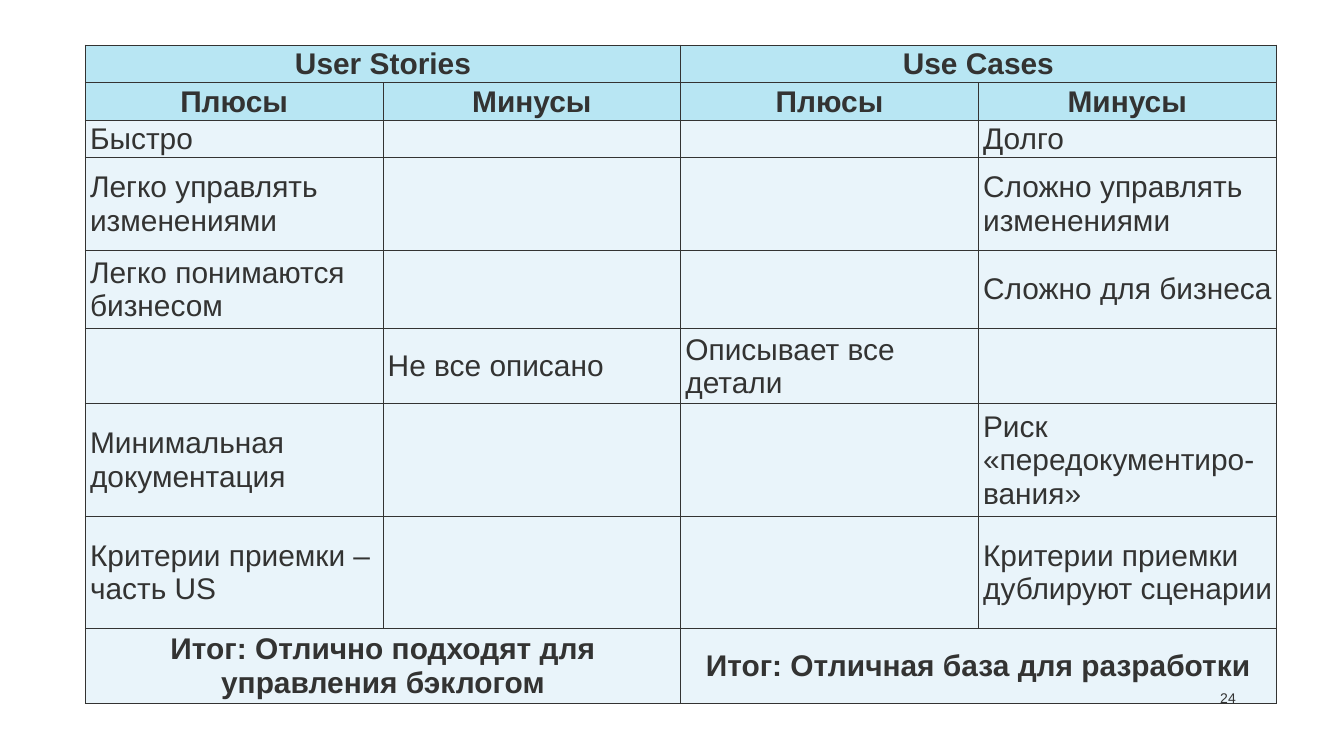
"""Builds a slide comparing the pros and cons of User Stories and Use Cases."""
from lxml.etree import SubElement
from pptx import Presentation
from pptx.dml.color import RGBColor
from pptx.enum.text import MSO_ANCHOR as Anchor, PP_ALIGN as Align
from pptx.oxml.ns import qn
from pptx.util import Inches, Pt

INK = RGBColor(0x33, 0x33, 0x32)
HEADER_FILL = RGBColor(0xB8, 0xE6, 0xF3)
BODY_FILL = RGBColor(0xE9, 0xF4, 0xFA)

HEADER_ROWS = 2
COLUMN_WIDTH = 4.43
ROW_HEIGHTS = [0.56, 0.56, 0.56, 1.37, 1.17, 1.12, 1.67, 1.67, 1.12]
ROWS = [
    ["User Stories", "", "Use Cases", ""],
    ["Плюсы", "Минусы"] * 2,
    ["Быстро", "", "", "Долго"],
    ["Легко управлять изменениями", "", "", "Сложно управлять изменениями"],
    ["Легко понимаются бизнесом", "", "", "Сложно для бизнеса"],
    ["", "Не все описано", "Описывает все детали", ""],
    ["Минимальная документация", "", "", "Риск «передокументиро-вания»"],
    ["Критерии приемки – часть US", "", "", "Критерии приемки дублируют сценарии"],
    ["Итог: Отлично подходят для управления бэклогом", "",
     "Итог: Отличная база для разработки", ""],
]
SPANNED_ROWS = (0, len(ROWS) - 1)


def write_text(frame, text, size=32, bold=False, align=Align.LEFT):
    paragraph = frame.paragraphs[0]
    paragraph.alignment = align
    run = paragraph.add_run()
    run.text = text
    font = run.font
    font.name, font.size, font.bold = "Arial", Pt(size), bold
    font.color.rgb = INK


class SlideBuilder:
    def __init__(self, slide, ink=INK, border_width=1):
        self.slide = slide
        self.ink = ink
        self.border_width = border_width

    def border(self, cell):
        properties = cell._tc.get_or_add_tcPr()
        for side in ("a:lnL", "a:lnR", "a:lnT", "a:lnB"):
            line = SubElement(properties, qn(side), w=str(Pt(self.border_width)))
            fill = SubElement(line, qn("a:solidFill"))
            SubElement(fill, qn("a:srgbClr"), val=str(self.ink))

    def cell(self, cell, text, fill, heading):
        self.border(cell)
        cell.fill.solid()
        cell.fill.fore_color.rgb = fill
        if text:
            cell.vertical_anchor = Anchor.MIDDLE
            cell.margin_left = Inches(0.01 if heading else 0.07)
            cell.margin_top = cell.margin_right = Inches(0.01)
            cell.margin_bottom = 0
            write_text(cell.text_frame, text, bold=heading,
                       align=Align.CENTER if heading else Align.LEFT)

    def table(self, left, top, rows, heights, column_width):
        columns = len(rows[0])
        table = self.slide.shapes.add_table(
            len(rows), columns, Inches(left), Inches(top),
            Inches(column_width * columns), Inches(sum(heights))).table
        table.first_row = table.horz_banding = False
        for column in table.columns:
            column.width = Inches(column_width)
        for row, height in zip(table.rows, heights):
            row.height = Inches(height)
        for r in SPANNED_ROWS:
            for c in range(0, columns, 2):
                table.cell(r, c).merge(table.cell(r, c + 1))
        for r, texts in enumerate(rows):
            fill = HEADER_FILL if r < HEADER_ROWS else BODY_FILL
            heading = r < HEADER_ROWS or r in SPANNED_ROWS
            for c, text in enumerate(texts):
                self.cell(table.cell(r, c), text, fill, heading)

    def text(self, left, top, width, height, text, **style):
        frame = self.slide.shapes.add_textbox(
            Inches(left), Inches(top), Inches(width), Inches(height)).text_frame
        frame.word_wrap = True
        frame.vertical_anchor = Anchor.BOTTOM
        frame.margin_left = frame.margin_right = 0
        frame.margin_top = frame.margin_bottom = 0
        write_text(frame, text, **style)


def main():
    presentation = Presentation()
    presentation.slide_width = Inches(20)
    presentation.slide_height = Inches(11.25)
    builder = SlideBuilder(presentation.slides.add_slide(presentation.slide_layouts[6]))
    builder.table(1.27, 0.67, ROWS, ROW_HEIGHTS, COLUMN_WIDTH)
    builder.text(16.95, 9.88, 1.44, 0.63, "24", size=15, align=Align.RIGHT)
    presentation.save("out.pptx")


if __name__ == "__main__":
    main()
